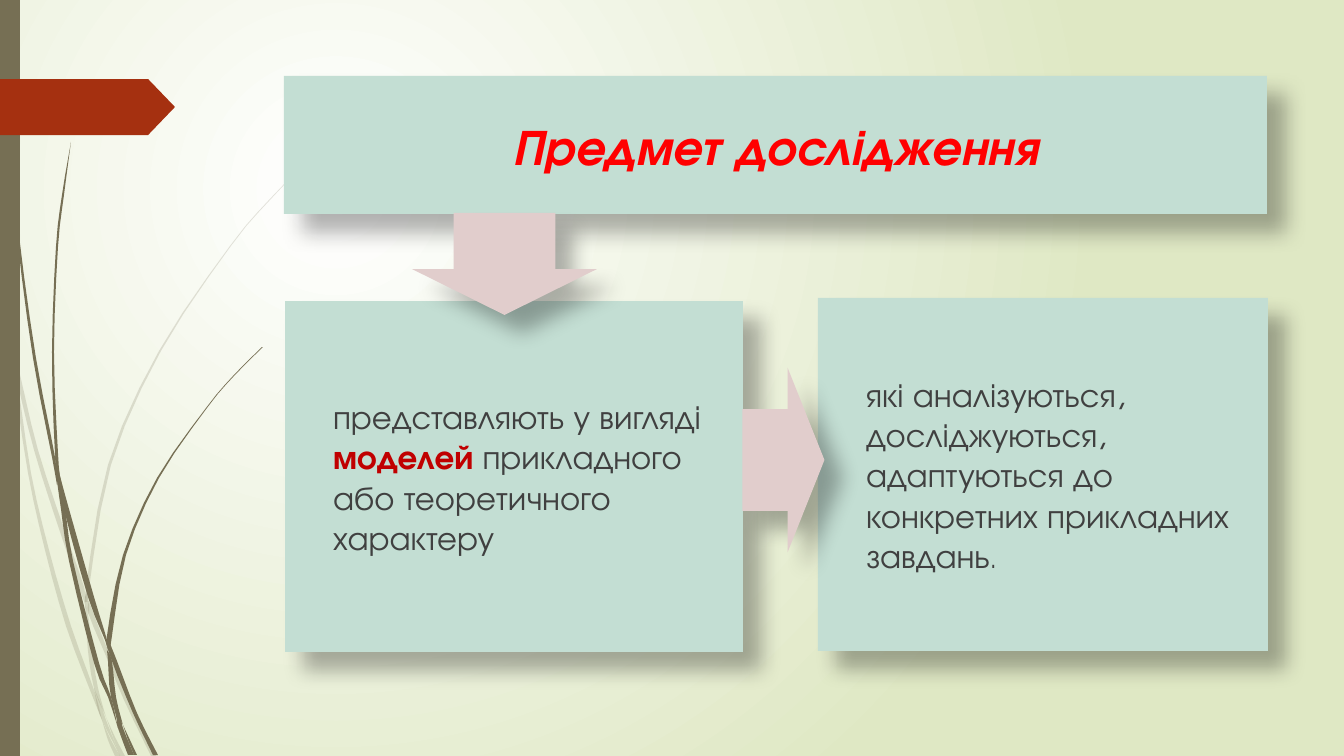
"""Build the slide on the subject of research: a heading and two linked statements."""
from lxml.etree import SubElement
from pptx import Presentation
from pptx.dml.color import RGBColor
from pptx.enum.shapes import MSO_SHAPE as SHAPE
from pptx.enum.text import MSO_ANCHOR as ANCHOR, MSO_AUTO_SIZE as AUTO_SIZE, PP_ALIGN as ALIGN
from pptx.oxml.ns import qn
from pptx.util import Pt

PX = 914400 / 100.8
FONT = "TeX Gyre Adventor"
WHITE = RGBColor(0xFF, 0xFF, 0xFF)
PALE_GREEN = RGBColor(0xDF, 0xE8, 0xC4)
OLIVE = RGBColor(0x76, 0x6F, 0x54)
RUST = RGBColor(0xA5, 0x30, 0x10)
MINT = RGBColor(0xC3, 0xDE, 0xD3)
ROSE = RGBColor(0xE1, 0xCD, 0xCC)
RED = RGBColor(0xFF, 0x00, 0x00)
DARK_RED = RGBColor(0xC0, 0x00, 0x00)
GREY = RGBColor(0x40, 0x40, 0x40)


def emu(*lengths):
    return [round(length * PX) for length in lengths]


def dress(shape, colour, opacity=100, shadow=False):
    shape.fill.solid()
    shape.fill.fore_color.rgb = colour
    shape.line.fill.background()
    shape.shadow.inherit = False
    properties = shape._element.spPr
    if opacity < 100:
        tint = properties.find(qn("a:solidFill"))[0]
        SubElement(tint, qn("a:alpha"), val=str(opacity * 1000))
    if shadow:
        outer = SubElement(properties.find(qn("a:effectLst")), qn("a:outerShdw"),
                           blurRad=str(Pt(15)), dist=str(Pt(18)), dir="2700000",
                           algn="ctr", rotWithShape="0")
        black = SubElement(outer, qn("a:srgbClr"), val="000000")
        SubElement(black, qn("a:alpha"), val="30000")


deck = Presentation()
deck.slide_width, deck.slide_height = emu(1344, 756)
slide = deck.slides.add_slide(deck.slide_layouts[3])
shapes = slide.shapes

backdrop = slide.background.fill
backdrop.gradient()
for stop, colour in zip(backdrop.gradient_stops, (WHITE, PALE_GREEN)):
    stop.color.rgb = colour
gradient = slide._element.find(".//" + qn("a:gradFill"))
gradient.remove(gradient.find(qn("a:lin")))
glow = SubElement(gradient, qn("a:path"), path="circle")
SubElement(glow, qn("a:fillToRect"), l="50000", t="50000", r="100000", b="100000")

# Each row of a blade is left edge, height, right edge.
FAINT_BLADES = [
    [(0, 284, 0), (0, 301, 4), (6, 325, 9), (11, 353, 11)],
    [(14, 348, 14), (17, 379, 21), (34, 450, 38), (58, 526, 63), (79, 587, 84), (85, 604, 85)],
    [(89, 601, 89), (89, 615, 94), (106, 656, 110), (124, 700, 128), (151, 756, 156)],
    [(106, 717, 106), (113, 737, 115), (120, 756, 125)],
    [(11, 353, 11), (14, 379, 17), (28, 473, 31), (45, 550, 49), (66, 626, 71),
     (90, 690, 94), (102, 720, 102)],
    [(85, 604, 85), (86, 620, 89), (88, 651, 92), (94, 688, 98), (106, 717, 106)],
    [(314, 154, 314), (270, 199, 271), (230, 246, 231), (159, 351, 161), (108, 465, 111),
     (86, 589, 89), (89, 601, 89)],
    [(102, 720, 102), (108, 740, 111), (115, 756, 120)],
    [(86, 591, 86), (85, 604, 89), (89, 615, 89)],
    [(94, 688, 94), (97, 705, 101), (102, 720, 106), (120, 756, 120)],
]
SOLID_BLADES = [
    [(3, 0, 4), (7, 111, 8), (17, 235, 19), (33, 358, 36), (52, 457, 55), (57, 485, 57)],
    [(60, 476, 60), (64, 509, 69), (88, 597, 94), (105, 640, 107), (107, 650, 107)],
    [(111, 646, 111), (112, 661, 117), (133, 713, 137), (153, 755, 158)],
    [(57, 481, 57), (61, 509, 65), (69, 561, 73), (94, 663, 99), (108, 697, 111),
     (118, 728, 118)],
    [(71, 142, 71), (62, 195, 64), (56, 247, 58), (52, 352, 54), (55, 453, 58), (60, 476, 60)],
    [(123, 725, 123), (128, 740, 130), (134, 755, 137)],
    [(55, 453, 55), (57, 481, 61), (65, 509, 65)],
    [(262, 347, 263), (233, 376, 234), (206, 408, 207), (157, 478, 159), (123, 555, 126),
     (107, 636, 112), (111, 646, 111)],
    [(118, 728, 118), (123, 742, 125), (128, 755, 132)],
    [(107, 650, 107), (108, 661, 112), (111, 697, 116), (123, 725, 123)],
    [(107, 636, 107), (107, 646, 111), (112, 661, 112)],
    [(111, 697, 111), (117, 720, 121), (118, 728, 123), (131, 755, 134)],
]
STEPS = 3
for opacity, blades in ((20, FAINT_BLADES), (100, SOLID_BLADES)):
    for rows in blades:
        padded = [rows[0], *rows, rows[-1]]
        smooth = []
        for quad in zip(padded, padded[1:], padded[2:], padded[3:]):
            for step in range(STEPS):
                t = step / STEPS
                smooth.append([
                    b + (t * (c - a) + t ** 2 * (2 * a - 5 * b + 4 * c - d)
                         + t ** 3 * (3 * b - a - 3 * c + d)) / 2
                    for a, b, c, d in zip(*quad)])
        smooth.append(rows[-1])
        outline = [emu(left, y) for left, y, right in smooth]
        outline += [emu(right, y) for left, y, right in reversed(smooth)]
        blade = shapes.build_freeform(*outline[0], scale=1.0)
        blade.add_line_segments(outline[1:], close=True)
        dress(blade.convert_to_shape(), OLIVE, opacity)

dress(shapes.add_shape(SHAPE.RECTANGLE, *emu(0, 0, 20, 756)), OLIVE)
tag = shapes.add_shape(SHAPE.PENTAGON, *emu(0, 79, 175, 56))
tag.adjustments[0] = 0.48
dress(tag, RUST)

PANELS = [
    ((284, 76, 983, 138), [("Предмет дослідження", 36, RED, True)]),
    ((285, 301, 458, 351), [("представляють у вигляді ", 24, GREY, False),
                            ("моделей", 24, DARK_RED, True),
                            (" прикладного або теоретичного характеру", 24, GREY, False)]),
    ((818, 298, 450, 353), [("які аналізуються, досліджуються, адаптуються до "
                             "конкретних прикладних завдань", 24, GREY, False),
                            (".", 18, GREY, False)]),
]
for panel, (place, wording) in zip(list(slide.placeholders), PANELS):
    shapes._spTree.append(panel._element)
    panel.left, panel.top, panel.width, panel.height = emu(*place)
    dress(panel, MINT, shadow=True)
    frame = panel.text_frame
    frame.word_wrap = True
    frame.auto_size = AUTO_SIZE.NONE
    frame.vertical_anchor = ANCHOR.MIDDLE
    paragraph = frame.paragraphs[0]
    is_title = panel == shapes.title
    paragraph.alignment = ALIGN.CENTER if is_title else ALIGN.LEFT
    if not is_title:
        paragraph.space_before = Pt(10)
        layout = paragraph._p.get_or_add_pPr()
        layout.set("marL", str(emu(38)[0]))
        layout.set("indent", "0")
        SubElement(layout, qn("a:buNone"))
    for text, size, colour, bold in wording:
        run = paragraph.add_run()
        run.text = text
        run.font.name = FONT
        run.font.size = Pt(size)
        run.font.bold = bold
        run.font.italic = is_title
        run.font.color.rgb = colour

for place, rotation in (((412, 213, 185, 102), 0), ((691, 419, 185, 82), 270)):
    arrow = shapes.add_shape(SHAPE.DOWN_ARROW, *emu(*place))
    arrow.rotation = rotation
    arrow.adjustments[0] = 0.55
    arrow.adjustments[1] = 0.45
    dress(arrow, ROSE, shadow=True)

deck.save("out.pptx")
